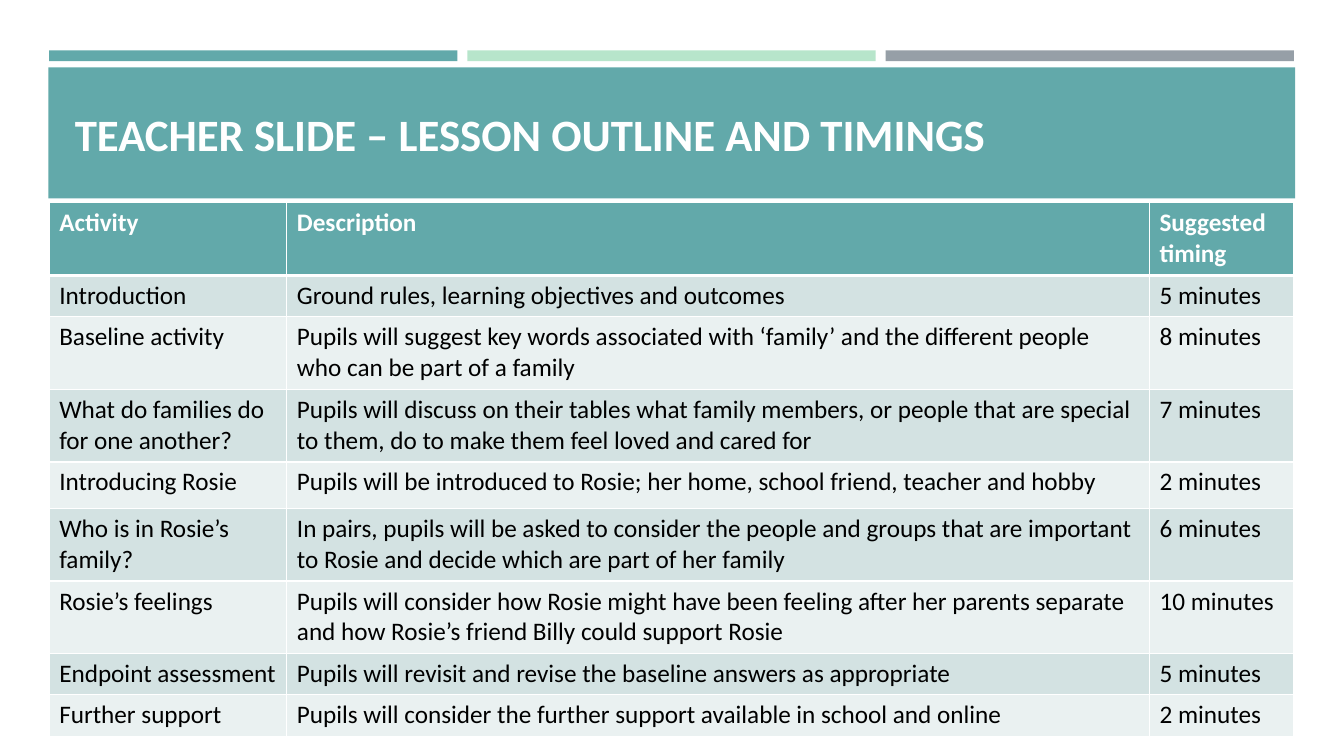
from lxml.etree import SubElement
from pptx import Presentation
from pptx.dml.color import RGBColor
from pptx.enum.shapes import MSO_SHAPE
from pptx.enum.text import MSO_ANCHOR, PP_ALIGN
from pptx.oxml.ns import qn
from pptx.util import Cm, Pt

# Content
FONT = "Calibri"
COLORS = {
    "teal": "62A9AA",
    "mint": "B7E5CB",
    "grey": "969FA7",
    "odd_row": "D3E2E2",
    "even_row": "EAF1F1",
    "white": "FFFFFF",
    "black": "000000",
}
TITLE = "TEACHER SLIDE – LESSON OUTLINE AND TIMINGS"
LESSON_ROWS = [
    ("Activity", "Description", "Suggested timing"),
    ("Introduction", "Ground rules, learning objectives and outcomes", "5 minutes"),
    ("Baseline activity",
     "Pupils will suggest key words associated with ‘family’ and the different people "
     "who can be part of a family", "8 minutes"),
    ("What do families do for one another?",
     "Pupils will discuss on their tables what family members, or people that are special "
     "to them, do to make them feel loved and cared for", "7 minutes"),
    ("Introducing Rosie",
     "Pupils will be introduced to Rosie; her home, school friend, teacher and hobby",
     "2 minutes"),
    ("Who is in Rosie’s family?",
     "In pairs, pupils will be asked to consider the people and groups that are important "
     "to Rosie and decide which are part of her family", "6 minutes"),
    ("Rosie’s feelings",
     "Pupils will consider how Rosie might have been feeling after her parents separate "
     "and how Rosie’s friend Billy could support Rosie", "10 minutes"),
    ("Endpoint assessment",
     "Pupils will revisit and revise the baseline answers as appropriate", "5 minutes"),
    ("Further support",
     "Pupils will consider the further support available in school and online", "2 minutes"),
]

# Layout in centimetres
LEFT = 1.24
BAR_TOP, BAR_WIDTH, BAR_HEIGHT, BAR_STEP = 1.27, 10.29, 0.27, 10.54
TABLE_TOP = 5.11
COLUMN_WIDTHS = [5.99, 21.74, 3.63]
ONE_LINE, MIDDLE, TWO_LINES = 1.04, 1.17, 1.83
ROW_HEIGHTS = [TWO_LINES, ONE_LINE, TWO_LINES, TWO_LINES, MIDDLE,
               TWO_LINES, TWO_LINES, ONE_LINE, ONE_LINE]


def color(name):
    return RGBColor.from_string(COLORS[name])


def add_block(slide, left, top, width, height, fill):
    shape = slide.shapes.add_shape(
        MSO_SHAPE.RECTANGLE, Cm(left), Cm(top), Cm(width), Cm(height))
    shape.shadow.inherit = False
    shape.fill.solid()
    shape.fill.fore_color.rgb = color(fill)
    shape.line.fill.background()
    return shape


def format_text(paragraph, size, font_color, bold):
    for run in paragraph.runs:
        run.font.name = FONT
        run.font.size = Pt(size)
        run.font.bold = bold
        run.font.color.rgb = color(font_color)


def set_borders(cell, widths):
    """Draw white borders; they must stand before the fill in the cell properties."""
    properties = cell._tc.get_or_add_tcPr()
    for index, (side, width) in enumerate(widths.items()):
        line = SubElement(properties, qn(f"a:ln{side}"), w=str(Pt(width)))
        fill = SubElement(line, qn("a:solidFill"))
        SubElement(fill, qn("a:srgbClr"), val=COLORS["white"])
        properties.insert(index, line)


def add_header(slide):
    # Three accent bars above the title band
    for index, fill in enumerate(("teal", "mint", "grey")):
        add_block(slide, LEFT + index * BAR_STEP, BAR_TOP, BAR_WIDTH, BAR_HEIGHT, fill)
    band = add_block(slide, 1.22, 1.7, 31.42, 3.3, "teal")

    # Title, brought in front of the band
    title = slide.shapes.title
    title.left, title.top, title.width, title.height = Cm(1.63), Cm(1.96), Cm(30.63), Cm(2.82)
    title.text_frame.text = TITLE
    title.text_frame.vertical_anchor = MSO_ANCHOR.MIDDLE
    paragraph = title.text_frame.paragraphs[0]
    paragraph.alignment = PP_ALIGN.LEFT
    format_text(paragraph, 32, "white", True)
    band.element.addnext(title.element)


def add_lesson_table(slide):
    table = slide.shapes.add_table(
        len(LESSON_ROWS), len(COLUMN_WIDTHS), Cm(LEFT), Cm(TABLE_TOP),
        Cm(sum(COLUMN_WIDTHS)), Cm(sum(ROW_HEIGHTS))).table
    for column, width in zip(table.columns, COLUMN_WIDTHS):
        column.width = Cm(width)
    for row, height in zip(table.rows, ROW_HEIGHTS):
        row.height = Cm(height)

    for row_index, texts in enumerate(LESSON_ROWS):
        is_header = row_index == 0
        fill = "teal" if is_header else "odd_row" if row_index % 2 else "even_row"
        borders = {"L": 1, "R": 1, "T": 3 if row_index == 1 else 1, "B": 3 if is_header else 1}
        for column_index, text in enumerate(texts):
            cell = table.cell(row_index, column_index)
            cell.text_frame.text = text
            format_text(cell.text_frame.paragraphs[0], 18,
                        "white" if is_header else "black", is_header)
            cell.fill.solid()
            cell.fill.fore_color.rgb = color(fill)
            set_borders(cell, borders)


def main():
    presentation = Presentation()
    presentation.slide_width, presentation.slide_height = Cm(33.87), Cm(19.05)
    slide = presentation.slides.add_slide(presentation.slide_layouts[5])
    add_header(slide)
    add_lesson_table(slide)
    presentation.save("out.pptx")


if __name__ == "__main__":
    main()
